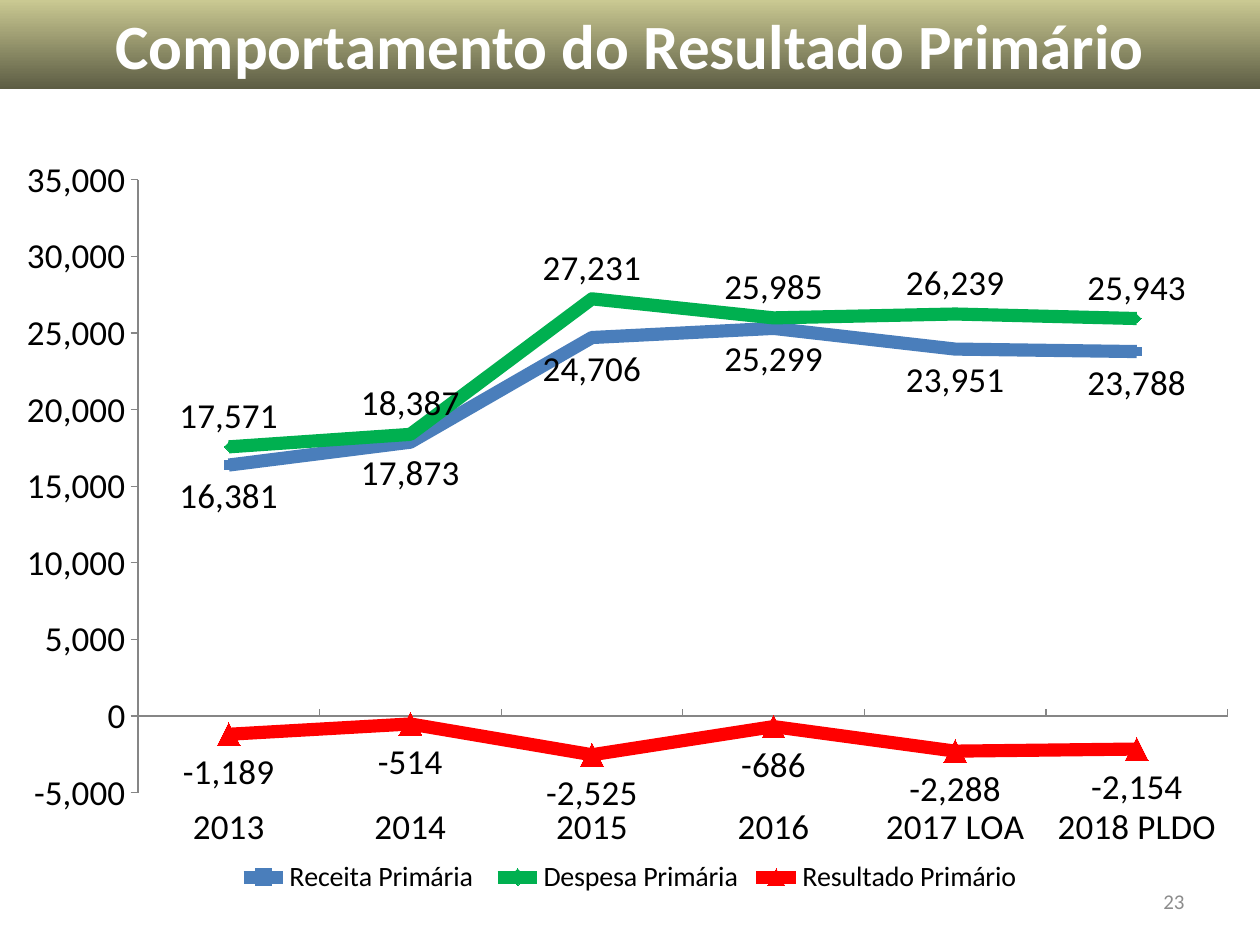
from lxml import etree
from pptx import Presentation
from pptx.chart.data import CategoryChartData
from pptx.dml.color import RGBColor
from pptx.enum.chart import (XL_CHART_TYPE, XL_LABEL_POSITION, XL_LEGEND_POSITION,
                             XL_MARKER_STYLE, XL_TICK_LABEL_POSITION, XL_TICK_MARK)
from pptx.enum.shapes import MSO_SHAPE
from pptx.enum.text import MSO_ANCHOR, PP_ALIGN
from pptx.oxml.ns import qn
from pptx.util import Pt

PX = 914400 // 126
FONT = "Calibri"
COLORS = {"olive": "CAC992", "dark_olive": "5D5D44", "white": "FFFFFF", "black": "000000",
          "gray": "8C8C8C", "axis": "868686", "blue": "4A7EBB", "green": "00B050", "red": "FF0000"}
RECT = MSO_SHAPE.RECTANGLE
LINE_MARKERS = XL_CHART_TYPE.LINE_MARKERS
ABOVE, BELOW = XL_LABEL_POSITION.ABOVE, XL_LABEL_POSITION.BELOW
SQUARE, DIAMOND, TRIANGLE = (XL_MARKER_STYLE.SQUARE, XL_MARKER_STYLE.DIAMOND,
                             XL_MARKER_STYLE.TRIANGLE)
LEGEND_BOTTOM = XL_LEGEND_POSITION.BOTTOM
LABELS_LOW = XL_TICK_LABEL_POSITION.LOW
TICK_IN, TICK_OUT, TICK_NONE = XL_TICK_MARK.INSIDE, XL_TICK_MARK.OUTSIDE, XL_TICK_MARK.NONE
MIDDLE = MSO_ANCHOR.MIDDLE
CENTER, RIGHT = PP_ALIGN.CENTER, PP_ALIGN.RIGHT

YEARS = ["2013", "2014", "2015", "2016", "2017 LOA", "2018 PLDO"]
# name, values, colour, marker, marker size, label position
SERIES = [
    ("Receita Primária ", (16381, 17873, 24706, 25299, 23951, 23788), "blue", SQUARE, 5, BELOW),
    ("Despesa Primária", (17571, 18387, 27231, 25985, 26239, 25943), "green", DIAMOND, 5, ABOVE),
    ("Resultado Primário", (-1189, -514, -2525, -686, -2288, -2154), "red", TRIANGLE, 13, BELOW),
]
PLOT = {"x": 0.1, "y": 0.126, "w": 0.886, "h": 0.744}


def rgb(name):
    return RGBColor.from_string(COLORS[name])


def set_font(font, size, color="black", bold=False):
    font.name, font.size, font.bold = FONT, Pt(size), bold
    font.color.rgb = rgb(color)


def write(tf, text, size, color, bold=False, align=CENTER):
    tf.word_wrap = True
    tf.vertical_anchor = MIDDLE
    p = tf.paragraphs[0]
    p.alignment = align
    r = p.add_run()
    r.text = text
    set_font(r.font, size, color, bold)


def set_plot_area(chart):
    """Fix the inner plot area as fractions of the chart."""
    plot_area = chart._chartSpace.chart.plotArea
    for old in plot_area.findall(qn("c:layout")):
        plot_area.remove(old)
    layout = etree.Element(qn("c:layout"))
    manual = etree.SubElement(layout, qn("c:manualLayout"))
    settings = [("layoutTarget", "inner"), ("xMode", "edge"), ("yMode", "edge"), *PLOT.items()]
    for tag, value in settings:
        etree.SubElement(manual, qn(f"c:{tag}")).set("val", str(value))
    plot_area.insert(0, layout)


class Deck:
    def __init__(self, prs):
        self.s = prs.slides.add_slide(prs.slide_layouts[6])

    def banner(self, box, text):
        sp = self.s.shapes.add_shape(RECT, *(v * PX for v in box))
        sp.shadow.inherit = False
        sp.line.fill.background()
        sp.fill.gradient()
        sp.fill.gradient_angle = 270
        for stop, color, position in zip(sp.fill.gradient_stops, ("olive", "dark_olive"), (0, 1)):
            stop.color.rgb = rgb(color)
            stop.position = position
        write(sp.text_frame, text, 36, "white", bold=True)

    def label(self, box, text, **fmt):
        sp = self.s.shapes.add_textbox(*(v * PX for v in box))
        write(sp.text_frame, text, **fmt)

    def line_chart(self, box):
        data = CategoryChartData(number_format="#,##0")
        data.categories = YEARS
        for name, values, *_ in SERIES:
            data.add_series(name, values)
        chart = self.s.shapes.add_chart(LINE_MARKERS, *(v * PX for v in box), data).chart
        chart.has_title = False
        set_font(chart.font, 10)
        set_plot_area(chart)
        chart.has_legend = True
        chart.legend.position = LEGEND_BOTTOM
        chart.legend.include_in_layout = False
        set_font(chart.legend.font, 16)

        cat, val = chart.category_axis, chart.value_axis
        for axis, tick in ((cat, TICK_IN), (val, TICK_OUT)):
            axis.has_major_gridlines = False
            axis.major_tick_mark, axis.minor_tick_mark = tick, TICK_NONE
            axis.format.line.color.rgb = rgb("axis")
            set_font(axis.tick_labels.font, 20)
        cat.tick_label_position = LABELS_LOW
        val.minimum_scale, val.maximum_scale, val.major_unit = -5000, 35000, 5000
        val.tick_labels.number_format = "#,##0"
        val.tick_labels.number_format_is_linked = False

        for series, (_, _, color, marker, size, position) in zip(chart.plots[0].series, SERIES):
            self.style_series(series, color, marker, size, position)

    def style_series(self, series, color, marker, size, position):
        series.smooth = False
        series.format.line.width = Pt(7.5)
        series.format.line.color.rgb = rgb(color)
        series.marker.style, series.marker.size = marker, size
        series.marker.format.fill.solid()
        series.marker.format.fill.fore_color.rgb = rgb(color)
        series.marker.format.line.color.rgb = rgb(color)
        labels = series.data_labels
        labels.show_value = True
        labels.position = position
        labels.number_format, labels.number_format_is_linked = "#,##0", False
        set_font(labels.font, 20)


def main():
    prs = Presentation()
    prs.slide_width, prs.slide_height = 1260 * PX, 945 * PX
    deck = Deck(prs)
    deck.label((903, 876, 294, 50), "23", size=12, color="gray", align=RIGHT)
    deck.banner((0, 0, 1260, 89), "Comportamento do Resultado Primário")
    deck.line_chart((15, 76, 1230, 824))
    prs.save("out.pptx")


if __name__ == "__main__":
    main()
